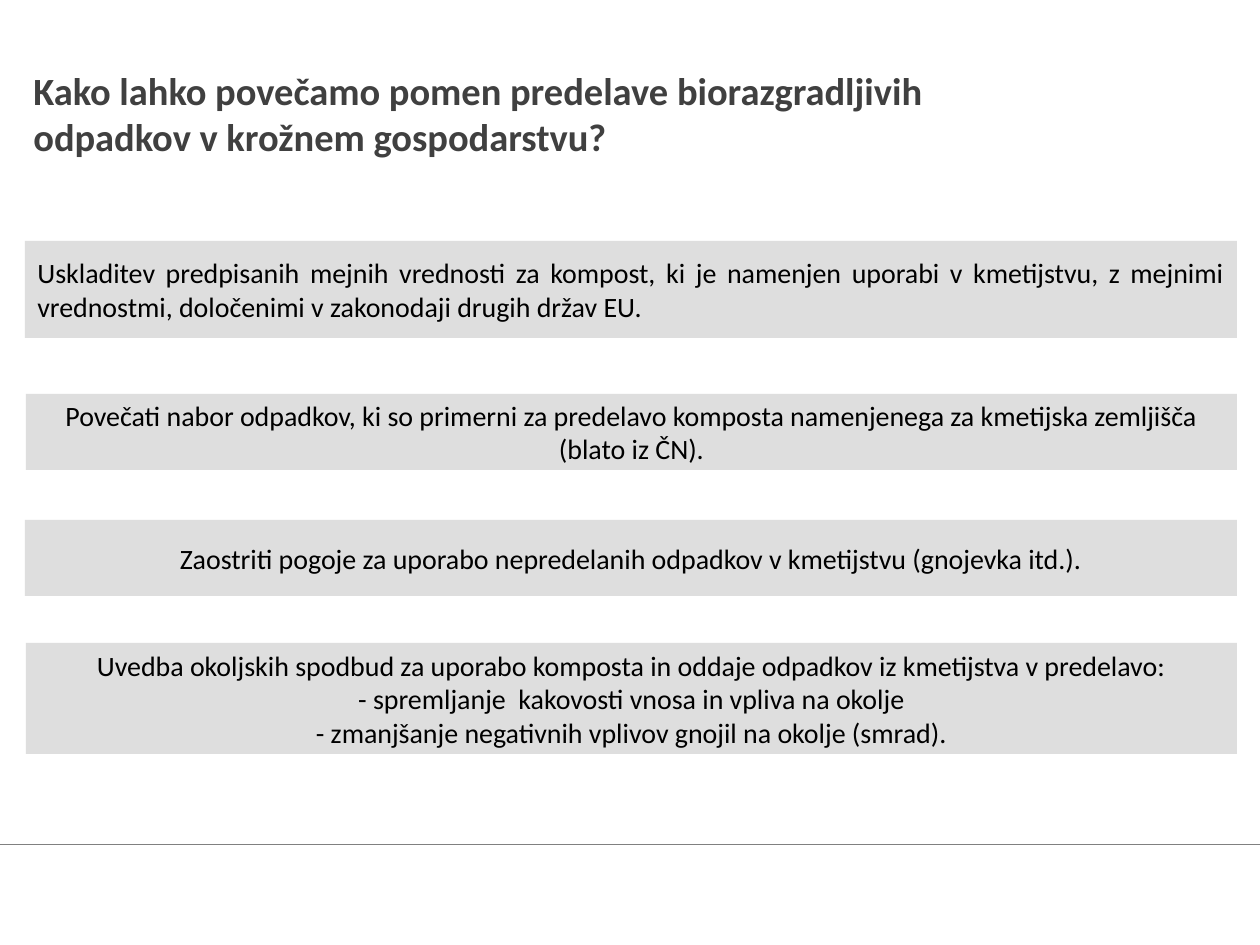
from lxml import etree
from pptx import Presentation
from pptx import util as u
from pptx.dml.color import RGBColor
from pptx.enum import shapes, text
from pptx.oxml.ns import qn

PX_PER_INCH = 126
WIDTH, HEIGHT = 1260, 945
RIGHT = 1237  # shared right edge of the bars
ALIGN = text.PP_ALIGN


def px(n):
    return u.Emu(round(n * 914400 / PX_PER_INCH))


def color(value):
    return RGBColor.from_string(value)


def write(sp, lines, size=16, ink="000000", bold=False, align=ALIGN.CENTER):
    """Fill a shape with one paragraph per line."""
    tf = sp.text_frame
    tf.word_wrap = True
    tf.vertical_anchor = text.MSO_ANCHOR.MIDDLE
    for i, line in enumerate(lines):
        p = tf.paragraphs[0] if i == 0 else tf.add_paragraph()
        p.alignment = align
        r = p.add_run()
        r.text = line
        r.font.name = "Calibri"
        r.font.size = u.Pt(size)
        r.font.bold = bold
        r.font.color.rgb = color(ink)


class Deck:
    title_ink = "404040"
    bar_fill = "BFBFBF"
    bar_alpha = 50
    rule_ink = "808080"

    def __init__(self):
        self.prs = Presentation()
        self.prs.slide_width, self.prs.slide_height = px(WIDTH), px(HEIGHT)
        self.s = self.prs.slides.add_slide(self.prs.slide_layouts[6])

    def rule(self, y):
        """Draw a thin line across the whole slide."""
        line = self.s.shapes.add_connector(
            shapes.MSO_CONNECTOR.STRAIGHT, 0, px(y), px(WIDTH), px(y))
        line.line.color.rgb = color(self.rule_ink)
        line.line.width = u.Pt(0.5)
        etree.SubElement(line._element.spPr, qn("a:effectLst"))

    def title(self, x, y, w, h, line):
        sp = self.s.shapes.add_textbox(px(x), px(y), px(w), px(h))
        write(sp, [line], size=22, ink=self.title_ink, bold=True,
              align=ALIGN.LEFT)

    def bar(self, x, y, h, lines, align=ALIGN.CENTER):
        """Draw a half-transparent grey box that ends at the right edge."""
        sp = self.s.shapes.add_shape(
            shapes.MSO_SHAPE.RECTANGLE, px(x), px(y), px(RIGHT - x), px(h))
        sp.shadow.inherit = False
        sp.line.fill.background()
        sp.fill.solid()
        sp.fill.fore_color.rgb = color(self.bar_fill)
        rgb = sp._element.spPr.find(qn("a:solidFill"))[0]
        etree.SubElement(rgb, qn("a:alpha"), val=str(self.bar_alpha * 1000))
        write(sp, lines, align=align)


def main():
    deck = Deck()
    deck.rule(844)
    deck.title(21, 58, 1055, 110,
               "Kako lahko povečamo pomen predelave biorazgradljivih "
               "odpadkov v krožnem gospodarstvu?")
    deck.bar(25, 241, 97, [
        "Uskladitev predpisanih mejnih vrednosti za kompost, ki je namenjen "
        "uporabi v kmetijstvu, z mejnimi vrednostmi, določenimi v zakonodaji "
        "drugih držav EU."], align=ALIGN.JUSTIFY)
    deck.bar(26, 394, 76, [
        "Povečati nabor odpadkov, ki so primerni za predelavo komposta "
        "namenjenega za kmetijska zemljišča",
        "(blato iz ČN)."])
    deck.bar(25, 520, 76, [
        "Zaostriti pogoje za uporabo nepredelanih odpadkov v kmetijstvu "
        "(gnojevka itd.)."])
    deck.bar(26, 643, 111, [
        "Uvedba okoljskih spodbud za uporabo komposta in oddaje odpadkov "
        "iz kmetijstva v predelavo:",
        "- spremljanje  kakovosti vnosa in vpliva na okolje",
        "- zmanjšanje negativnih vplivov gnojil na okolje (smrad)."])
    deck.prs.save("out.pptx")


if __name__ == "__main__":
    main()
